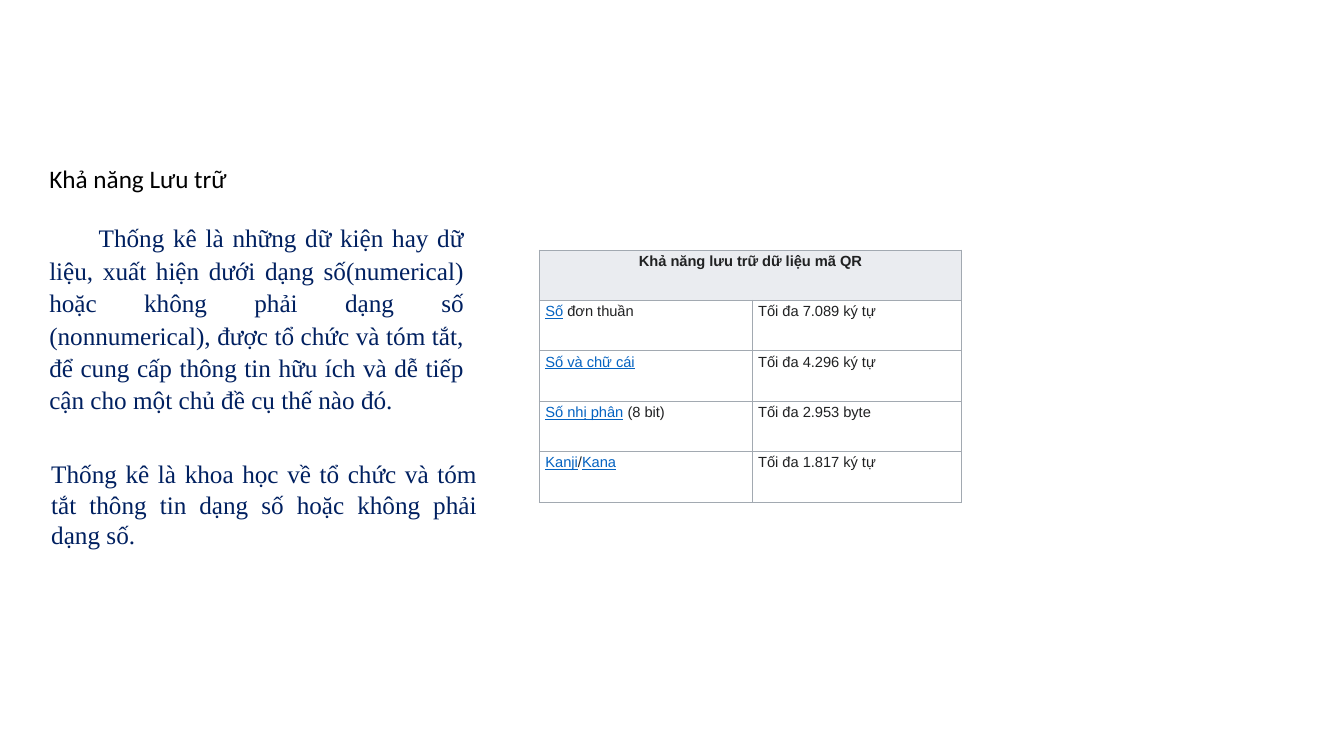
"""Build a slide about statistics and the storage capacity of a two-dimensional code."""
from lxml.etree import SubElement
from pptx import Presentation
from pptx.dml.color import RGBColor
from pptx.enum.text import MSO_ANCHOR, MSO_AUTO_SIZE, PP_ALIGN
from pptx.oxml.ns import qn
from pptx.util import Inches, Pt

TITLE = "Khả năng Lưu trữ"
DEFINITION = (
    "Thống kê là những dữ kiện hay dữ liệu, xuất hiện dưới dạng số(numerical) "
    "hoặc không phải dạng số (nonnumerical), được tổ chức và tóm tắt, để cung cấp "
    "thông tin hữu ích và dễ tiếp cận cho một chủ đề cụ thế nào đó."
)
SUMMARY = (
    "Thống kê là khoa học về tổ chức và tóm tắt thông tin dạng số "
    "hoặc không phải dạng số."
)
TABLE_HEADING = "Khả năng lưu trữ dữ liệu mã QR"
LINK, PLAIN = True, False
CAPACITIES = [
    ([("Số", LINK), (" đơn thuần", PLAIN)], "Tối đa 7.089 ký tự"),
    ([("Số và chữ cái", LINK)], "Tối đa 4.296 ký tự"),
    ([("Số nhị phân", LINK), (" (8 bit)", PLAIN)], "Tối đa 2.953 byte"),
    ([("Kanji", LINK), ("/", PLAIN), ("Kana", LINK)], "Tối đa 1.817 ký tự"),
]
COLUMN_WIDTHS = [2.11, 2.08]
ROW_HEIGHT = 0.5
BLACK, NAVY, INK, BLUE = "000000", "002060", "202122", "0563C1"
HEADING_FILL, BORDER = "EAECF0", "A2A9B1"


def color(value):
    return RGBColor.from_string(value)


def set_font(font, name, size, value):
    font.name, font.size = name, Pt(size)
    font.color.rgb = color(value)


def fill_box(box, text, alignment, font_name, value):
    frame = box.text_frame
    frame.word_wrap = True
    frame.auto_size = MSO_AUTO_SIZE.NONE
    frame.vertical_anchor = MSO_ANCHOR.TOP
    para = frame.paragraphs[0]
    para.text, para.alignment = text, alignment
    set_font(para.font, font_name, 18, value)
    return para


def add_body(page, left, top, width, height, text):
    box = page.shapes.add_textbox(Inches(left), Inches(top), Inches(width), Inches(height))
    return fill_box(box, text, PP_ALIGN.JUSTIFY, "Times New Roman", NAVY)


def add_borders(cell):
    properties = cell._tc.get_or_add_tcPr()
    for side in ("a:lnL", "a:lnR", "a:lnT", "a:lnB"):
        line = SubElement(properties, qn(side), w=str(Pt(0.75)))
        fill = SubElement(line, qn("a:solidFill"))
        SubElement(fill, qn("a:srgbClr"), val=BORDER)


def fill_cell(cell, spans, alignment=PP_ALIGN.JUSTIFY, bold=False):
    cell.margin_left = cell.margin_right = Inches(0.06)
    cell.margin_top = cell.margin_bottom = Inches(0.03)
    para = cell.text_frame.paragraphs[0]
    para.alignment, para.space_after = alignment, Pt(11)
    set_font(para.font, "Arial", 10.5, INK)
    para.font.bold = bold
    for text, linked in spans:
        span = para.add_run()
        span.text = text
        if linked:
            span.font.underline = True
            span.font.color.rgb = color(BLUE)


def add_capacity_table(page):
    row_count = len(CAPACITIES) + 1
    table = page.shapes.add_table(
        row_count, len(COLUMN_WIDTHS), Inches(5.35), Inches(2.48),
        Inches(sum(COLUMN_WIDTHS)), Inches(row_count * ROW_HEIGHT),
    ).table
    table.first_row = table.horz_banding = False
    for column, width in zip(table.columns, COLUMN_WIDTHS):
        column.width = Inches(width)
    for cell in table.iter_cells():
        add_borders(cell)
        cell.fill.background()
    heading = table.cell(0, 0)
    heading.merge(table.cell(0, 1))
    heading.fill.solid()
    heading.fill.fore_color.rgb = color(HEADING_FILL)
    fill_cell(heading, [(TABLE_HEADING, PLAIN)], PP_ALIGN.CENTER, bold=True)
    for row, (kind, capacity) in enumerate(CAPACITIES, start=1):
        fill_cell(table.cell(row, 0), kind)
        fill_cell(table.cell(row, 1), [(capacity, PLAIN)])


def main():
    deck = Presentation()
    deck.slide_width, deck.slide_height = Inches(13.33), Inches(7.5)
    page = deck.slides.add_slide(deck.slide_layouts[5])

    title = page.shapes.title
    title.left, title.top = Inches(0.39), Inches(1.57)
    title.width, title.height = Inches(4.42), Inches(0.4)
    fill_box(title, TITLE, PP_ALIGN.LEFT, "Calibri", BLACK)

    definition = add_body(page, 0.39, 2.14, 4.31, 2.02, DEFINITION)
    definition.line_spacing = 1.07
    definition.space_after = Pt(8)
    definition._p.get_or_add_pPr().set("indent", str(Inches(0.49)))
    add_body(page, 0.41, 4.5, 4.42, 1.01, SUMMARY)

    add_capacity_table(page)
    deck.save("out.pptx")


if __name__ == "__main__":
    main()
